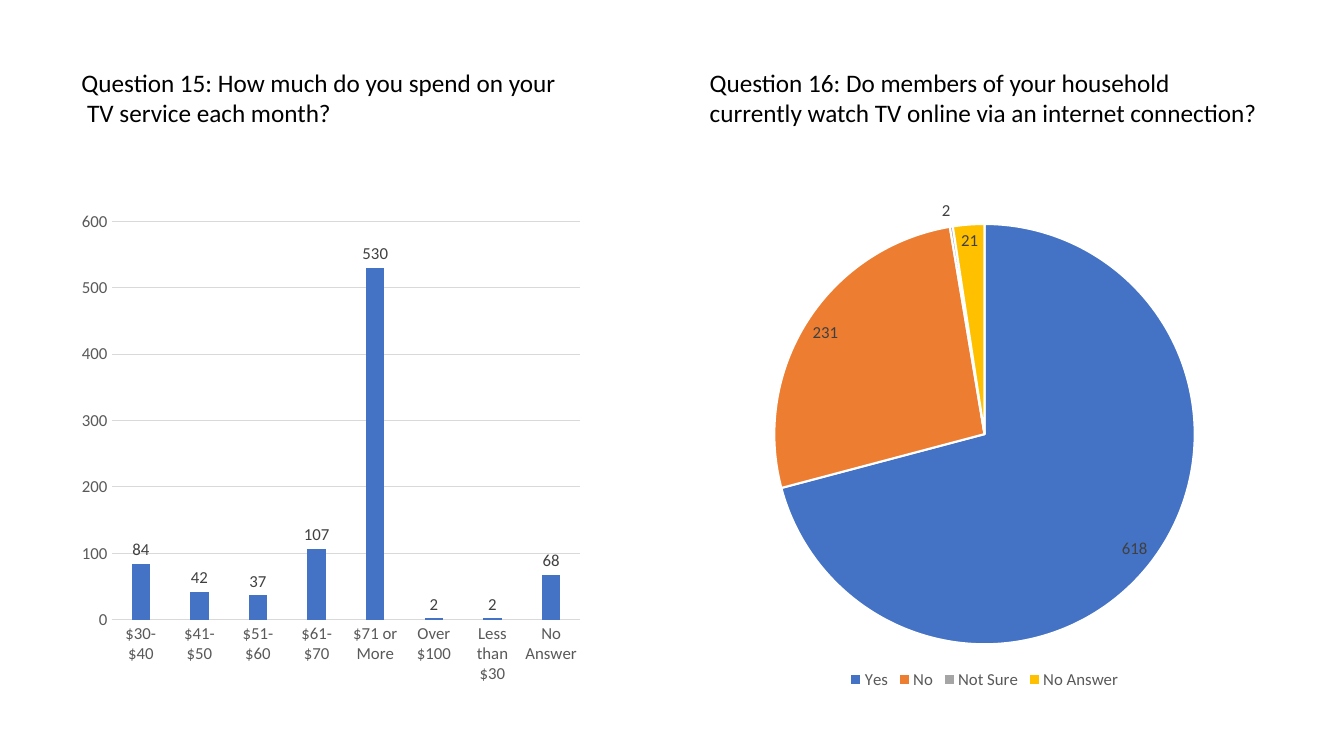
import pptx
import pptx.chart.data
import pptx.dml.color
import pptx.enum.chart
import pptx.util

COLORS = {
    "black": "000000", "axis": "595959", "label": "404040", "grid": "D9D9D9",
    "white": "FFFFFF", "blue": "4472C4", "orange": "ED7D31", "gray": "A5A5A5",
    "gold": "FFC000",
}


class SurveySlide:
    """Holds the survey style and the slide being filled."""

    font_name = "Calibri"
    question_size = 18
    chart_size = 12

    def __init__(self, presentation):
        self.slide = presentation.slides.add_slide(presentation.slide_layouts[6])

    def color(self, name):
        return pptx.dml.color.RGBColor.from_string(COLORS[name])

    def style_font(self, font, size, color):
        font.name = self.font_name
        font.size = pptx.util.Pt(size)
        font.color.rgb = self.color(color)

    def fill(self, area, color):
        area.fill.solid()
        area.fill.fore_color.rgb = self.color(color)

    def line(self, line, color, width):
        line.color.rgb = self.color(color)
        line.width = pptx.util.Pt(width)

    def question(self, lines, box):
        frame = self.slide.shapes.add_textbox(*map(pptx.util.Inches, box)).text_frame
        frame.word_wrap = True
        frame.text = "\n".join(lines)
        for paragraph in frame.paragraphs:
            self.style_font(paragraph.font, self.question_size, "black")

    def chart(self, kind, answers, box, label_position):
        answer_data = pptx.chart.data.CategoryChartData()
        answer_data.categories = list(answers)
        answer_data.add_series("Series 1", list(answers.values()))
        chart = self.slide.shapes.add_chart(
            kind, *map(pptx.util.Inches, box), answer_data).chart
        self.style_font(chart.font, 10, "black")
        chart.has_title = False
        chart.has_legend = False
        plot = chart.plots[0]
        plot.vary_by_categories = False
        plot.has_data_labels = True
        labels = plot.data_labels
        labels.show_value = True
        labels.position = label_position
        self.style_font(labels.font, self.chart_size, "label")
        return chart

    def columns(self, answers, box):
        chart = self.chart(
            pptx.enum.chart.XL_CHART_TYPE.COLUMN_CLUSTERED, answers, box,
            pptx.enum.chart.XL_LABEL_POSITION.OUTSIDE_END)
        plot = chart.plots[0]
        plot.gap_width = 219
        plot.overlap = -27
        self.fill(plot.series[0].format, "blue")
        for axis in (chart.category_axis, chart.value_axis):
            axis.major_tick_mark = pptx.enum.chart.XL_TICK_MARK.NONE
            axis.minor_tick_mark = pptx.enum.chart.XL_TICK_MARK.NONE
            self.style_font(axis.tick_labels.font, self.chart_size, "axis")
        self.line(chart.category_axis.format.line, "grid", 0.75)
        chart.value_axis.format.line.fill.background()
        self.line(chart.value_axis.major_gridlines.format.line, "grid", 0.75)

    def pie(self, answers, slice_colors, box):
        chart = self.chart(
            pptx.enum.chart.XL_CHART_TYPE.PIE, answers, box,
            pptx.enum.chart.XL_LABEL_POSITION.BEST_FIT)
        plot = chart.plots[0]
        plot.vary_by_categories = True
        for index, color in enumerate(slice_colors):
            answer_slice = plot.series[0].points[index].format
            self.fill(answer_slice, color)
            self.line(answer_slice.line, "white", 1.5)
        chart.has_legend = True
        chart.legend.position = pptx.enum.chart.XL_LEGEND_POSITION.BOTTOM
        chart.legend.include_in_layout = False
        self.style_font(chart.legend.font, self.chart_size, "axis")


def main():
    presentation = pptx.Presentation()
    presentation.slide_width = pptx.util.Inches(13.33)
    presentation.slide_height = pptx.util.Inches(7.5)
    survey = SurveySlide(presentation)

    monthly_spend = {
        "$30-$40": 84, "$41-$50": 42, "$51-$60": 37, "$61-$70": 107,
        "$71 or More": 530, "Over $100": 2, "Less than $30": 2, "No Answer": 68,
    }
    online_viewing = {"Yes": 618, "No": 231, "Not Sure": 2, "No Answer": 21}

    survey.columns(monthly_spend, (0.71, 2, 5.15, 4.88))
    survey.pie(online_viewing, ("blue", "orange", "gray", "gold"),
               (6.75, 1.83, 6.03, 5.05))
    survey.question(["Question 15: How much do you spend on your",
                     " TV service each month?"], (0.71, 0.62, 5.61, 0.71))
    survey.question(["Question 16: Do members of your household currently "
                     "watch TV online via an internet connection?"],
                    (6.94, 0.62, 5.65, 0.71))
    presentation.save("out.pptx")


if __name__ == "__main__":
    main()
